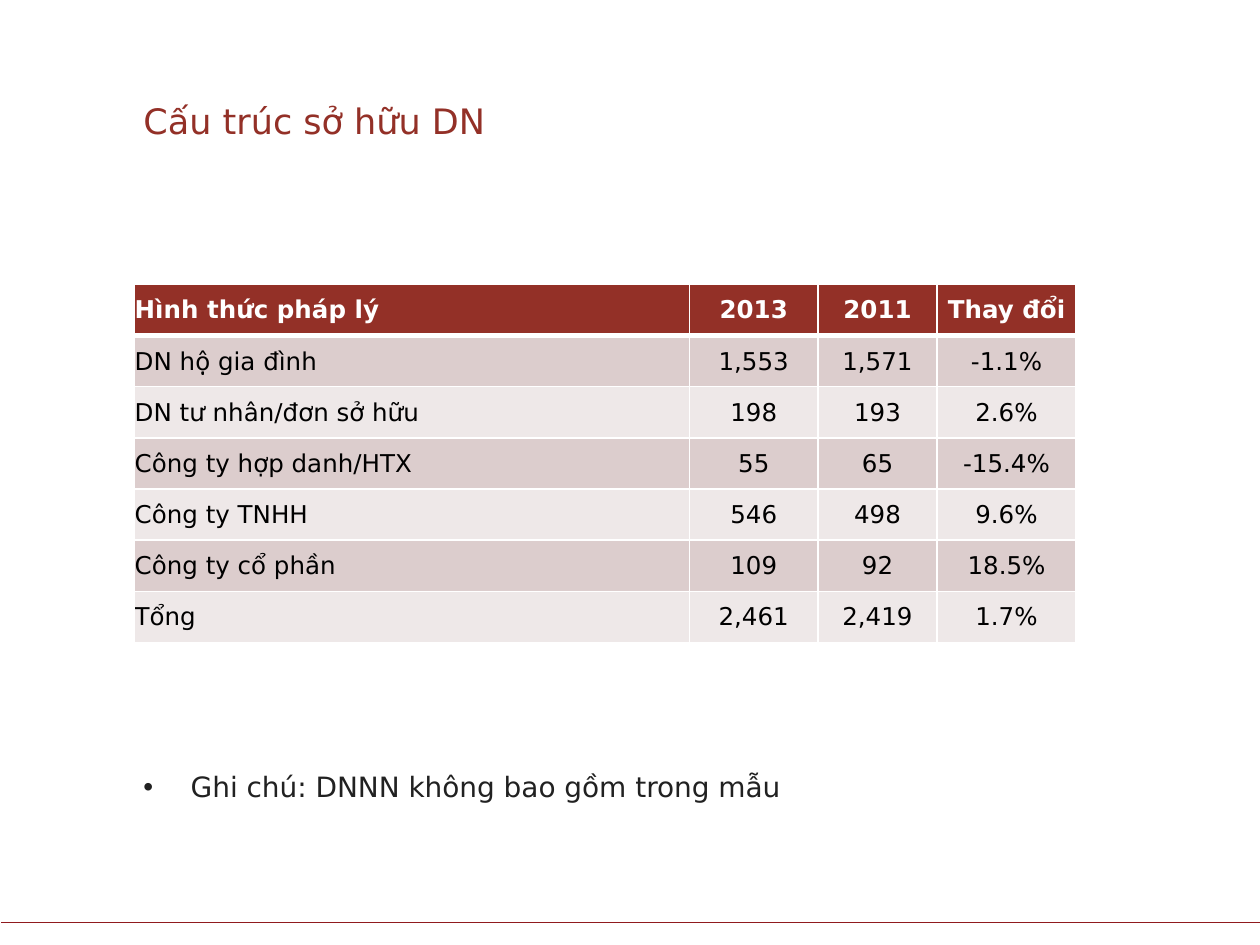
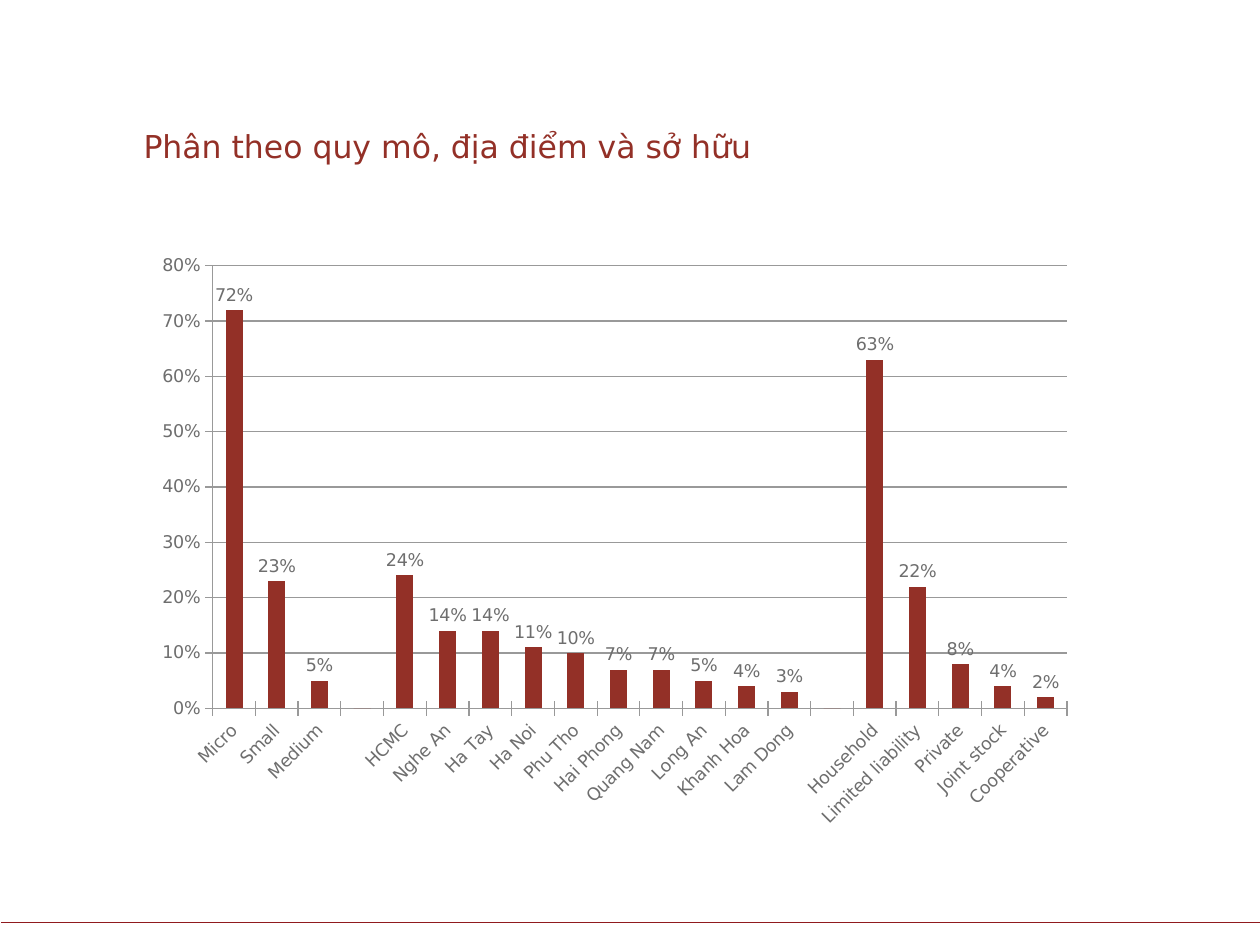
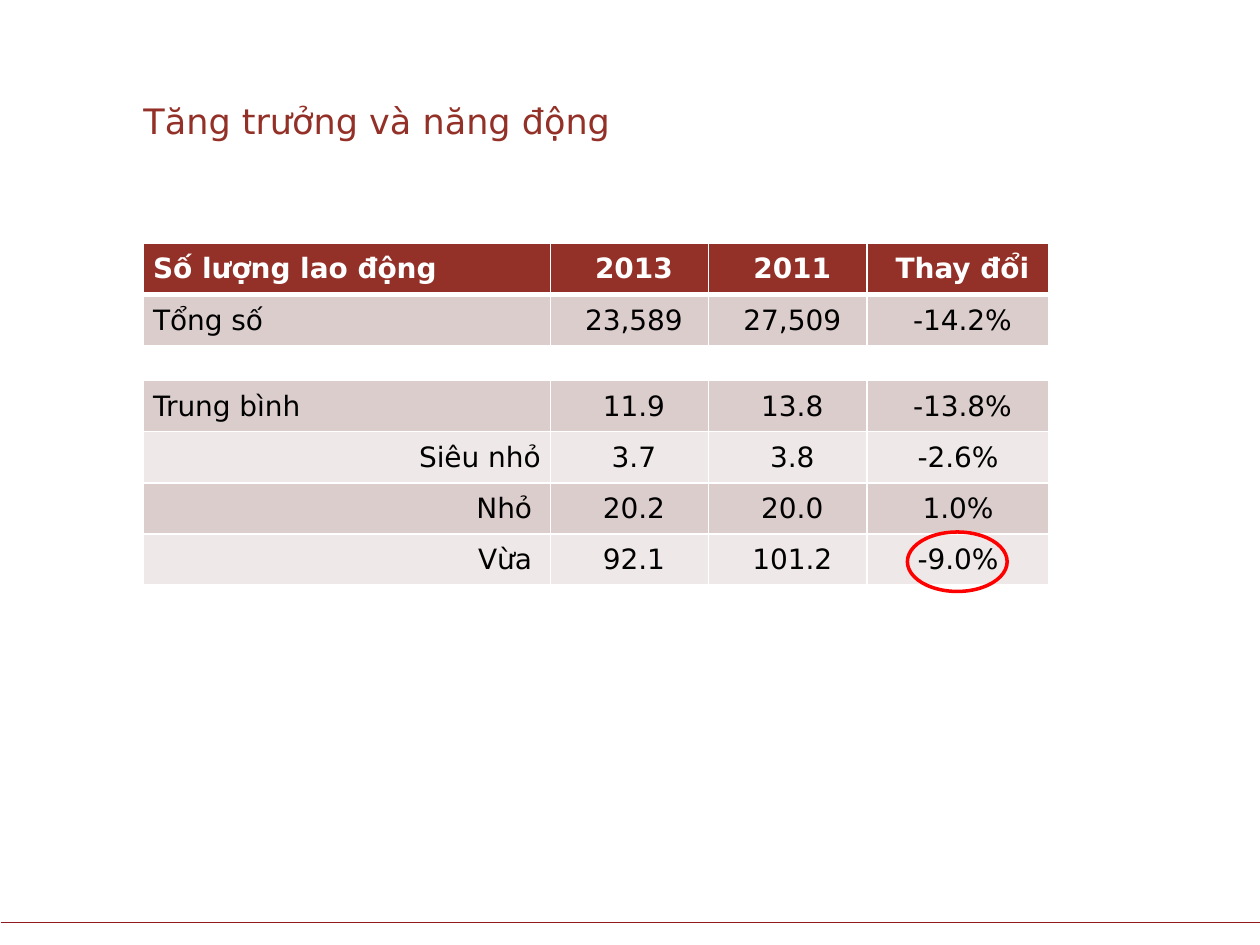
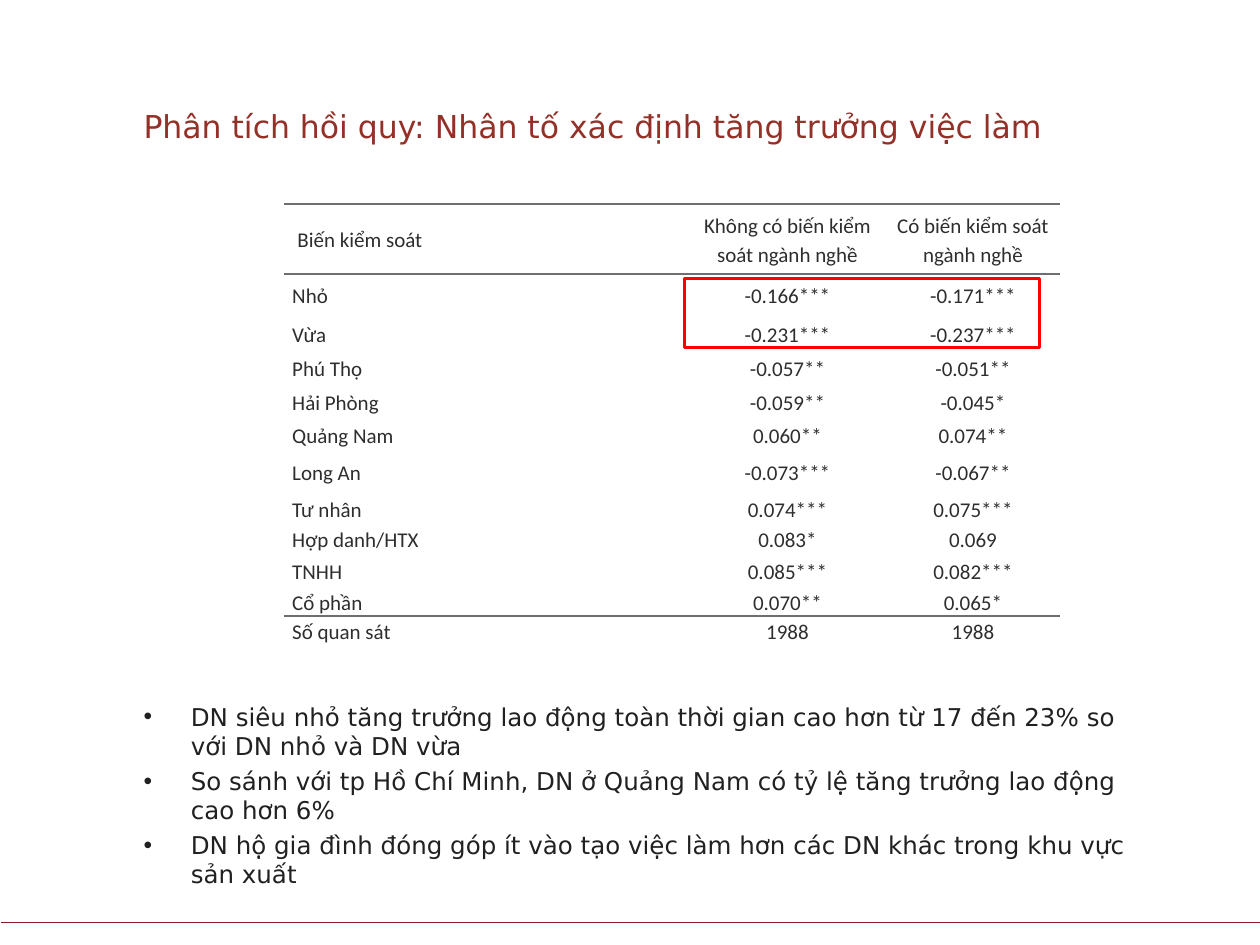
from lxml import etree
from pptx import Presentation
from pptx.chart.data import CategoryChartData
from pptx.dml.color import RGBColor
from pptx.enum.chart import XL_CHART_TYPE, XL_LABEL_POSITION, XL_TICK_MARK
from pptx.enum.shapes import MSO_CONNECTOR, MSO_SHAPE
from pptx.enum.text import MSO_ANCHOR, PP_ALIGN
from pptx.oxml.ns import qn
from pptx.util import Pt

COLUMN_CLUSTERED = XL_CHART_TYPE.COLUMN_CLUSTERED
OUTSIDE_END = XL_LABEL_POSITION.OUTSIDE_END
CROSS = XL_TICK_MARK.CROSS
STRAIGHT = MSO_CONNECTOR.STRAIGHT
OVAL, RECTANGLE = MSO_SHAPE.OVAL, MSO_SHAPE.RECTANGLE
TOP, MIDDLE, BOTTOM = MSO_ANCHOR.TOP, MSO_ANCHOR.MIDDLE, MSO_ANCHOR.BOTTOM
LEFT, CENTER, RIGHT = PP_ALIGN.LEFT, PP_ALIGN.CENTER, PP_ALIGN.RIGHT

BRICK = RGBColor(0x93, 0x30, 0x27)
FOOTER_RED = RGBColor(0x90, 0x1A, 0x1E)
MARK_RED = RGBColor(0xFF, 0x00, 0x00)
ROSE = RGBColor(0xDC, 0xCD, 0xCD)
PALE_ROSE = RGBColor(0xEE, 0xE8, 0xE8)
WHITE = RGBColor(0xFF, 0xFF, 0xFF)
BLACK = RGBColor(0x00, 0x00, 0x00)
BODY_INK = RGBColor(0x21, 0x21, 0x21)
TABLE_INK = RGBColor(0x2E, 0x2E, 0x2E)
GRAY = RGBColor(0x6E, 0x6E, 0x6E)
GRID_GRAY = RGBColor(0x99, 0x99, 0x99)

MAIN_FONT = "DejaVu Sans"
TABLE_FONT = "Calibri"
MARGIN = 82
NO_GRID_STYLE = "{2D5ABB26-0587-4C30-8999-92F81FD0307C}"

# Row styles: fill, text colour, bold, borders as (side, colour, width)
SIDES = [("lnL", WHITE, 1), ("lnR", WHITE, 1)]
HEADER = (BRICK, WHITE, True, SIDES + [("lnT", WHITE, 1), ("lnB", WHITE, 3)])
DARK = (ROSE, BLACK, False, SIDES + [("lnB", WHITE, 1)])
LIGHT = (PALE_ROSE, BLACK, False, SIDES + [("lnB", WHITE, 1)])
GAP = (None, BLACK, False, [])
RULED_HEADER = (WHITE, TABLE_INK, False, [("lnT", GRAY, 1), ("lnB", GRAY, 1)])
PLAIN = (WHITE, TABLE_INK, False, [])
RULED = (WHITE, TABLE_INK, False, [("lnB", GRAY, 1)])


def add_text(slide, box, lines, size, color, anchor=TOP, bulleted=False):
    frame = slide.shapes.add_textbox(*map(Pt, box)).text_frame
    frame.word_wrap = True
    frame.vertical_anchor = anchor
    frame.margin_left = frame.margin_right = frame.margin_top = frame.margin_bottom = 0
    frame.text = "\n".join(lines)
    for number, paragraph in enumerate(frame.paragraphs):
        if bulleted:
            properties = paragraph._p.get_or_add_pPr()
            properties.set("marL", str(Pt(27)))
            properties.set("indent", str(-Pt(27)))
            etree.SubElement(properties, qn("a:buFont"), typeface="Arial")
            etree.SubElement(properties, qn("a:buChar"), char="•")
        if number:
            paragraph.space_before = Pt(3)
        font = paragraph.runs[0].font
        font.name, font.size, font.color.rgb = MAIN_FONT, Pt(size), color


def add_table(slide, left, top, widths, heights, rows, styles, font_name, size,
              margins, line_spacing=None):
    table = slide.shapes.add_table(
        len(rows), len(widths), Pt(left), Pt(top), Pt(sum(widths)), Pt(sum(heights))).table
    table.first_row = table.horz_banding = False
    table._tbl.tblPr.find(qn("a:tableStyleId")).text = NO_GRID_STYLE
    for column, width in zip(table.columns, widths):
        column.width = Pt(width)
    for row, height, texts, style in zip(table.rows, heights, rows, styles):
        row.height = Pt(height)
        fill, color, bold, borders = style
        for number, (cell, text) in enumerate(zip(row.cells, texts)):
            cell.margin_left, cell.margin_top, cell.margin_right, cell.margin_bottom = map(
                Pt, margins)
            cell.vertical_anchor = MIDDLE
            for side, border_color, width in borders:
                line = etree.SubElement(
                    cell._tc.get_or_add_tcPr(), qn("a:" + side), w=str(Pt(width)))
                solid = etree.SubElement(line, qn("a:solidFill"))
                etree.SubElement(solid, qn("a:srgbClr"), val=str(border_color))
            if fill is None:
                cell.fill.background()
            else:
                cell.fill.solid()
                cell.fill.fore_color.rgb = fill
            paragraph = cell.text_frame.paragraphs[0]
            if not text:
                etree.SubElement(paragraph._p, qn("a:endParaRPr"), sz="1000")
                continue
            paragraph.text = text
            paragraph.alignment = CENTER if number else LEFT
            if line_spacing:
                paragraph.line_spacing = line_spacing
            font = paragraph.runs[0].font
            font.name, font.size, font.bold, font.color.rgb = font_name, Pt(size), bold, color
    return table


presentation = Presentation()
presentation.slide_width, presentation.slide_height = Pt(720), Pt(540)

# Footer line and title on every slide: title, width, height, size
titles = [
    ("Cấu trúc sở hữu DN", 518, 45, 20),
    ("Phân theo quy mô, địa điểm và sở hữu", 578, 58, 18),
    ("Tăng trưởng và năng động", 518, 45, 20),
    ("Phân tích hồi quy: Nhân tố xác định tăng trưởng việc làm", 533, 47, 18),
]
slides = []
for title, width, height, size in titles:
    slide = presentation.slides.add_slide(presentation.slide_layouts[6])
    footer = slide.shapes.add_connector(STRAIGHT, Pt(720.5), Pt(527), Pt(0.5), Pt(527))
    footer.line.color.rgb = FOOTER_RED
    footer.line.width = Pt(0.75)
    etree.SubElement(footer._element.spPr, qn("a:effectLst"))
    add_text(slide, (MARGIN, 36, width, height), [title], size, BRICK, BOTTOM)
    slides.append(slide)
ownership_slide, distribution_slide, growth_slide, regression_slide = slides

# Slide 1: ownership table and note
ownership_rows = [
    ("Hình thức pháp lý", "2013", "2011", "Thay đổi"),
    ("DN hộ gia đình", "1,553", "1,571", "-1.1%"),
    ("DN tư nhân/đơn sở hữu", "198", "193", "2.6%"),
    ("Công ty hợp danh/HTX", "55", "65", "-15.4%"),
    ("Công ty TNHH", "546", "498", "9.6%"),
    ("Công ty cổ phần", "109", "92", "18.5%"),
    ("Tổng", "2,461", "2,419", "1.7%"),
]
add_table(ownership_slide, 76.5, 162.5, [317.5, 73.5, 68, 79.5], [29.25] * 7, ownership_rows,
          [HEADER] + [DARK, LIGHT] * 3, MAIN_FONT, 14, (0.5, 0.5, 0.5, 0))
add_text(ownership_slide, (MARGIN, 440, 518, 26), ["Ghi chú: DNNN không bao gồm trong mẫu"],
         16, BODY_INK, bulleted=True)

# Slide 2: distribution chart, with empty categories between the groups
shares = [
    ("Micro", 0.72), ("Small", 0.23), ("Medium", 0.05), ("", 0),
    ("HCMC", 0.24), ("Nghe An", 0.14), ("Ha Tay", 0.14), ("Ha Noi", 0.11),
    ("Phu Tho", 0.1), ("Hai Phong", 0.07), ("Quang Nam", 0.07), ("Long An", 0.05),
    ("Khanh Hoa", 0.04), ("Lam Dong", 0.03), ("", 0),
    ("Household", 0.63), ("Limited liability", 0.22), ("Private", 0.08),
    ("Joint stock", 0.04), ("Cooperative", 0.02),
]
chart_data = CategoryChartData(number_format="0%")
chart_data.categories = [name for name, share in shares]
chart_data.add_series("Series 1", [share for name, share in shares])
chart = distribution_slide.shapes.add_chart(
    COLUMN_CLUSTERED, Pt(MARGIN), Pt(139.5), Pt(538.5), Pt(340), chart_data).chart
chart.has_legend = chart.has_title = False
chart.font.name, chart.font.size, chart.font.color.rgb = MAIN_FONT, Pt(10), GRAY

plot = chart.plots[0]
plot.vary_by_categories = False
plot.gap_width = 150
series = plot.series[0]
series.format.fill.solid()
series.format.fill.fore_color.rgb = BRICK
labels = series.data_labels
labels.show_value = True
labels.number_format, labels.number_format_is_linked = "0%", False
labels.position = OUTSIDE_END
gaps = [index for index, (name, share) in enumerate(shares) if not name]
for position, index in enumerate(gaps):
    hidden_label = etree.Element(qn("c:dLbl"))
    etree.SubElement(hidden_label, qn("c:idx"), val=str(index))
    etree.SubElement(hidden_label, qn("c:delete"), val="1")
    labels._element.insert(position, hidden_label)

value_axis, category_axis = chart.value_axis, chart.category_axis
value_axis.minimum_scale, value_axis.maximum_scale, value_axis.major_unit = 0, 0.8, 0.1
value_axis.tick_labels.number_format = "0%"
value_axis.tick_labels.number_format_is_linked = False
value_axis.has_major_gridlines = True
value_axis.major_gridlines.format.line.color.rgb = GRID_GRAY
for axis in (value_axis, category_axis):
    axis.major_tick_mark = CROSS
    axis.format.line.color.rgb = GRID_GRAY
category_axis.tick_labels.font.size = Pt(10)
category_axis._element.find(qn("c:txPr")).find(qn("a:bodyPr")).set("rot", "-2700000")

# Slide 3: employment table
growth_rows = [
    ("Số lượng lao động", "2013", "2011", "Thay đổi"),
    ("Tổng số", "23,589", "27,509", "-14.2%"),
    ("", "", "", ""),
    ("Trung bình", "11.9", "13.8", "-13.8%"),
    ("Siêu nhỏ", "3.7", "3.8", "-2.6%"),
    ("Nhỏ", "20.2", "20.0", "1.0%"),
    ("Vừa", "92.1", "101.2", "-9.0%"),
]
growth_table = add_table(
    growth_slide, MARGIN, 139, [232.5, 90.5, 90.5, 104], [29.25] * 2 + [20] + [29.25] * 4,
    growth_rows, [HEADER, DARK, GAP, DARK, LIGHT, DARK, LIGHT], MAIN_FONT, 16,
    (5.5, 0.5, 0.5, 0))
for row_index, right_margin in ((4, 5.5), (5, 10.5), (6, 10.5)):
    size_cell = growth_table.cell(row_index, 0)
    size_cell.text_frame.paragraphs[0].alignment = RIGHT
    size_cell.margin_right = Pt(right_margin)
    growth_table.cell(row_index, 3).margin_left = Pt(0.5)

# Slide 4: regression table and findings
regression_rows = [
    ("Biến kiểm soát", "Không có biến kiểm soát ngành nghề", "Có biến kiểm soát ngành nghề"),
    ("Nhỏ", "-0.166***", "-0.171***"),
    ("Vừa", "-0.231***", "-0.237***"),
    ("Phú Thọ", "-0.057**", "-0.051**"),
    ("Hải Phòng", "-0.059**", "-0.045*"),
    ("Quảng Nam", "0.060**", "0.074**"),
    ("Long An", "-0.073***", "-0.067**"),
    ("Tư nhân", "0.074***", "0.075***"),
    ("Hợp danh/HTX", "0.083*", "0.069"),
    ("TNHH", "0.085***", "0.082***"),
    ("Cổ phần", "0.070**", "0.065*"),
    ("Số quan sát", "1988", "1988"),
]
regression_table = add_table(
    regression_slide, 162, 116.5, [232, 112, 100],
    [40, 24, 20, 19.5, 19.5, 18, 24, 18, 16.5, 19.5, 16.5, 16.5], regression_rows,
    [RULED_HEADER] + [PLAIN] * 9 + [RULED, PLAIN], TABLE_FONT, 12, (5, 0, 5, 0), 1.15)
regression_table.cell(0, 0).margin_left = Pt(8)
findings = [
    "DN siêu nhỏ tăng trưởng lao động toàn thời gian cao hơn từ 17 đến 23% so với DN nhỏ và DN vừa",
    "So sánh với tp Hồ Chí Minh, DN ở Quảng Nam có tỷ lệ tăng trưởng lao động cao hơn 6%",
    "DN hộ gia đình đóng góp ít vào tạo việc làm hơn các DN khác trong khu vực sản xuất",
]
add_text(regression_slide, (MARGIN, 401, 572, 118), findings, 14, BODY_INK, bulleted=True)

# Red marks around the key figures
marks = [
    (growth_slide, OVAL, (518.5, 304, 57, 34), 2),
    (regression_slide, RECTANGLE, (391, 159, 203, 39.5), 1.5),
]
for slide, outline, box, line_width in marks:
    mark = slide.shapes.add_shape(outline, *map(Pt, box))
    mark.shadow.inherit = False
    mark.fill.background()
    mark.line.color.rgb = MARK_RED
    mark.line.width = Pt(line_width)

presentation.save("out.pptx")
